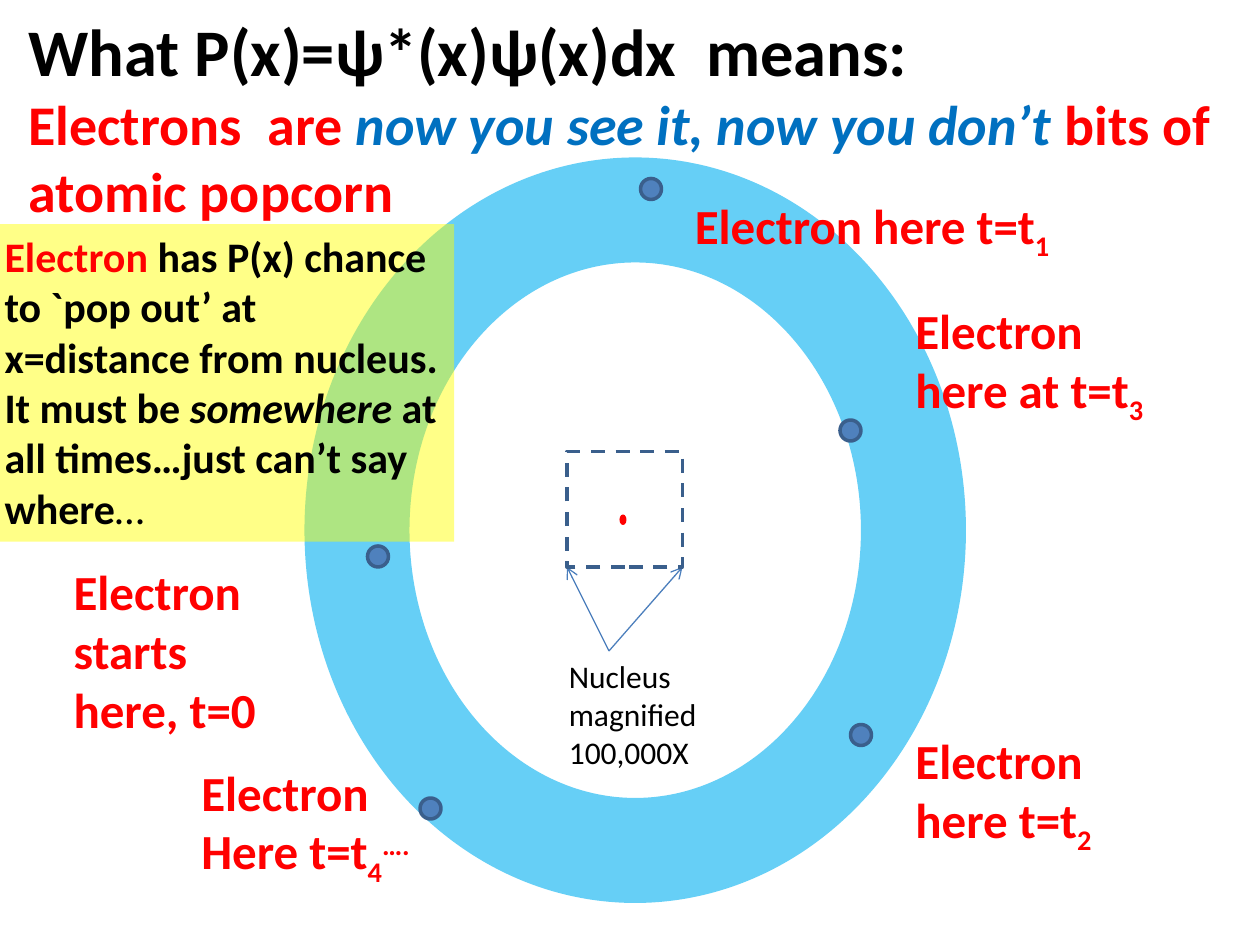
from lxml import etree
from pptx import Presentation
from pptx.dml.color import RGBColor
from pptx.enum.dml import MSO_LINE_DASH_STYLE as DASH
from pptx.enum.shapes import MSO_CONNECTOR, MSO_SHAPE
from pptx.enum.text import MSO_ANCHOR, MSO_AUTO_SIZE, PP_ALIGN
from pptx.oxml.ns import qn
from pptx.util import Pt

FONT = "Calibri"
BLACK = RGBColor(0x00, 0x00, 0x00)
RED = RGBColor(0xFF, 0x00, 0x00)
BLUE = RGBColor(0x00, 0x70, 0xC0)
YELLOW = RGBColor(0xFF, 0xFF, 0x00)
SKY = RGBColor(0x00, 0xB0, 0xF0)
STEEL = RGBColor(0x4F, 0x81, 0xBD)
NAVY = RGBColor(0x3A, 0x5F, 0x8C)
ARROW = RGBColor(0x4B, 0x7E, 0xBC)

ELECTRON_SIZE = 12
SUBSCRIPT, SUPERSCRIPT = -25, 30

# Electron dot position, label box, label paragraphs, subscript, trailing superscript
ELECTRONS = [
    ((210, 312), (35, 317.5, 144, 109), ["Electron starts here, t=0"], "", ""),
    ((366, 102), (390, 108, 252, 41), ["Electron here t=t"], "1", ""),
    ((486, 414), (516, 414, 156, 75), ["Electron", "here t=t"], "2", ""),
    ((480, 240), (516, 168, 180, 75), ["Electron", "here at t=t"], "3", ""),
    ((240, 456), (108, 432, 150, 75), ["Electron", "Here t=t"], "4", "…."),
]


def write(frame, paragraphs, size, color, bold=True):
    """Fill a frame; each paragraph is a list of (text, overrides) runs."""
    frame.word_wrap = True
    frame.auto_size = MSO_AUTO_SIZE.NONE
    frame.vertical_anchor = MSO_ANCHOR.TOP
    for index, runs in enumerate(paragraphs):
        paragraph = frame.add_paragraph() if index else frame.paragraphs[0]
        paragraph.alignment = PP_ALIGN.LEFT
        for text, style in runs:
            run = paragraph.add_run()
            run.text = text
            font = run.font
            font.name = FONT
            font.size = Pt(style.get("size", size))
            font.bold = style.get("bold", bold)
            font.italic = style.get("italic", False)
            font.color.rgb = style.get("color", color)
            if "baseline" in style:
                run.font._element.set("baseline", str(style["baseline"] * 1000))


def add_label(slide, box, paragraphs, size, color, bold=True):
    label = slide.shapes.add_textbox(*map(Pt, box))
    write(label.text_frame, paragraphs, size, color, bold)


def add_figure(slide, kind, box, fill=None, line=None, width=2):
    figure = slide.shapes.add_shape(kind, *map(Pt, box))
    figure.shadow.inherit = False
    if fill is None:
        figure.fill.background()
    else:
        figure.fill.solid()
        figure.fill.fore_color.rgb = fill
    if line is None:
        figure.line.fill.background()
    else:
        figure.line.color.rgb = line
        figure.line.width = Pt(width)
    return figure


def set_opacity(figure, percent):
    """Apply the opacity to every explicit colour of the figure's fill and line."""
    for color in figure._element.spPr.iter(qn("a:srgbClr")):
        etree.SubElement(color, qn("a:alpha")).set("val", str(percent * 1000))


def add_arrow(slide, tail, head):
    arrow = slide.shapes.add_connector(MSO_CONNECTOR.STRAIGHT, *map(Pt, tail + head))
    arrow.line.color.rgb = ARROW
    arrow.line.width = Pt(0.75)
    etree.SubElement(arrow.line._get_or_add_ln(), qn("a:tailEnd")).set("type", "arrow")
    etree.SubElement(arrow._element.spPr, qn("a:effectLst"))


def add_heading(slide, box):
    title = slide.shapes.title
    title.left, title.top, title.width, title.height = map(Pt, box)
    write(title.text_frame, [
        [("What P(x)=ψ*(x)ψ(x)dx  means:", {"size": 38, "color": BLACK})],
        [("Electrons  are ", {}),
         ("now you see it, now you don’t", {"color": BLUE, "italic": True}),
         (" bits of atomic popcorn", {})],
    ], 32, RED)


def add_orbital(slide, box):
    ring = add_figure(slide, MSO_SHAPE.OVAL, box, line=SKY, width=60)
    set_opacity(ring, 60)


def add_nucleus(slide, box):
    left, top, side, _ = box
    bottom = top + side
    add_figure(slide, MSO_SHAPE.OVAL, (left + 30, top + 36, 4, 6), fill=RED)
    add_label(slide, (left - 6, bottom + 48, 114, 73),
              [[("Nucleus magnified 100,000X", {})]], 18, BLACK, bold=False)
    for corner in (left, left + side):
        add_arrow(slide, (left + 24, bottom + 48), (corner, bottom))
    frame = add_figure(slide, MSO_SHAPE.RECTANGLE, box, line=NAVY)
    frame.line.dash_style = DASH.DASH


def add_electron(slide, position, label_box, lines, subscript, superscript):
    add_figure(slide, MSO_SHAPE.OVAL, (*position, ELECTRON_SIZE, ELECTRON_SIZE), STEEL, NAVY)
    paragraphs = [[(line, {})] for line in lines]
    for text, baseline in ((subscript, SUBSCRIPT), (superscript, SUPERSCRIPT)):
        if text:
            paragraphs[-1].append((text, {"baseline": baseline}))
    add_label(slide, label_box, paragraphs, 28, RED)


def add_explanation(slide, box):
    note = add_figure(slide, MSO_SHAPE.RECTANGLE, box, fill=YELLOW)
    set_opacity(note, 47)
    write(note.text_frame, [
        [("Electron ", {"color": RED}),
         ("has P(x) chance to `pop out’ at x=distance from nucleus.", {})],
        [("It must be ", {}), ("somewhere", {"italic": True}),
         (" at all times…just can’t say where", {}), ("…", {"bold": False})],
    ], 24, BLACK)


def main():
    deck = Presentation()
    deck.slide_width, deck.slide_height = Pt(720), Pt(540)
    slide = deck.slides.add_slide(deck.slide_layouts[5])
    add_heading(slide, (9, 2, 720, 131))
    add_orbital(slide, (204, 120, 318, 366))
    add_nucleus(slide, (324, 258, 66, 66))
    for electron in ELECTRONS:
        add_electron(slide, *electron)
    add_explanation(slide, (-4.5, 128, 264, 181.5))
    deck.save("out.pptx")


if __name__ == "__main__":
    main()
